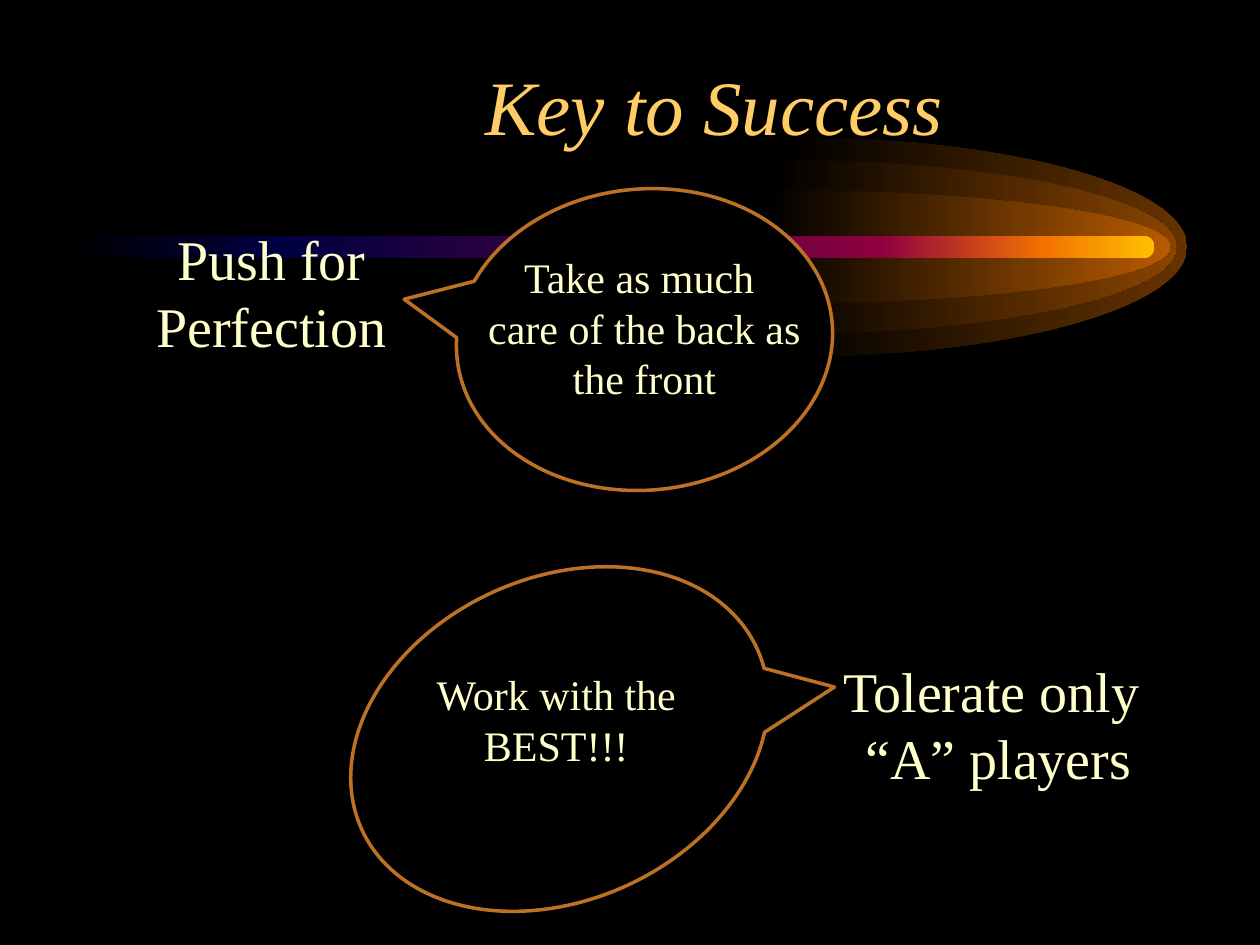
from lxml import etree
from pptx import Presentation
from pptx.dml.color import RGBColor
from pptx.enum import shapes, text
from pptx.oxml.ns import qn
from pptx.util import Inches, Pt

BLACK = RGBColor(0x00, 0x00, 0x00)
GOLD = RGBColor(0xFF, 0xCC, 0x66)
CREAM = RGBColor(0xFF, 0xFF, 0xCC)
COPPER = RGBColor(0xBD, 0x71, 0x26)
GLOWS = [
    (6.29, 0.87, RGBColor(0x66, 0x33, 0x00)),
    (6.21, 0.69, RGBColor(0x89, 0x44, 0x00)),
    (6.16, 0.45, RGBColor(0xB7, 0x5B, 0x00)),
]
COMET = [
    (0, BLACK),
    (20, RGBColor(0x00, 0x00, 0x40)),
    (50, RGBColor(0x40, 0x00, 0x40)),
    (75, RGBColor(0x8F, 0x00, 0x40)),
    (90, RGBColor(0xF2, 0x73, 0x00)),
    (100, RGBColor(0xFF, 0xBF, 0x00)),
]
AXIS_Y = 1.96
ARC = 0.55


def fill_gradient(sp, stops):
    """Give a shape a left-to-right gradient and no outline."""
    sp.shadow.inherit = False
    sp.line.fill.background()
    sp.fill.gradient()
    sp.fill.gradient_angle = 0
    gs_list = sp._element.spPr.find(qn("a:gradFill")).find(qn("a:gsLst"))
    for gs in list(gs_list):
        gs_list.remove(gs)
    for percent, color in stops:
        gs = etree.SubElement(gs_list, qn("a:gs"), pos=str(percent * 1000))
        etree.SubElement(gs, qn("a:srgbClr"), val=str(color))


def curve_segments(sp, curves):
    """Turn the first line segments, three by three, into Bezier curves."""
    outline = next(sp._element.iter(qn("a:path")))
    lines = outline.findall(qn("a:lnTo"))
    for i in range(0, 3 * curves, 3):
        curve = etree.Element(qn("a:cubicBezTo"))
        lines[i].addprevious(curve)
        for line in lines[i:i + 3]:
            curve.append(line[0])
            outline.remove(line)


def add_glow(s, x, radius_y, color, radius_x=3.13):
    """Draw the right half of an ellipse fading in from black."""
    units = [(0, -1), (ARC, -1), (1, -ARC), (1, 0), (1, ARC), (ARC, 1), (0, 1),
             (-0.05 / radius_x, 1), (0, 0)]
    points = [(Inches(x + radius_x * dx), Inches(AXIS_Y + radius_y * dy))
              for dx, dy in units]
    builder = s.shapes.build_freeform(*points[0])
    builder.add_line_segments(points[1:], close=True)
    sp = builder.convert_to_shape()
    curve_segments(sp, 2)
    fill_gradient(sp, [(0, BLACK), (100, color)])


def add_comet(s):
    """Draw the rounded gradient bar along the glow axis."""
    sp = s.shapes.add_shape(
        shapes.MSO_SHAPE.ROUNDED_RECTANGLE,
        Inches(0.5), Inches(AXIS_Y - 0.09), Inches(8.66), Inches(0.18),
    )
    sp.adjustments[0] = 0.5
    fill_gradient(sp, COMET)


def add_callout(s, left, top, width, height, rotation):
    """Draw a rotated, outlined speech bubble."""
    sp = s.shapes.add_shape(
        shapes.MSO_SHAPE.OVAL_CALLOUT,
        Inches(left), Inches(top), Inches(width), Inches(height),
    )
    sp.shadow.inherit = False
    sp.rotation = rotation
    sp.fill.solid()
    sp.fill.fore_color.rgb = BLACK
    sp.line.color.rgb = COPPER
    sp.line.width = Pt(2)


def add_text(s, lines, left, top, width, height, size, color=CREAM, italic=None,
             anchor=text.MSO_ANCHOR.TOP):
    """Add a centred text box with one paragraph per line."""
    sp = s.shapes.add_textbox(Inches(left), Inches(top), Inches(width), Inches(height))
    tf = sp.text_frame
    tf.word_wrap = True
    tf.vertical_anchor = anchor
    for i, line in enumerate(lines):
        p = tf.add_paragraph() if i else tf.paragraphs[0]
        p.alignment = text.PP_ALIGN.CENTER
        r = p.add_run()
        r.text = line
        r.font.name = "Times New Roman"
        r.font.size = Pt(size)
        r.font.italic = italic
        r.font.color.rgb = color


def main():
    """Build the slide and save it."""
    prs = Presentation()
    prs.slide_width, prs.slide_height = Inches(10), Inches(7.5)
    s = prs.slides.add_slide(prs.slide_layouts[6])
    s.background.fill.solid()
    s.background.fill.fore_color.rgb = BLACK

    for x, radius_y, color in GLOWS:
        add_glow(s, x, radius_y, color)
    add_comet(s)

    add_text(s, ["Key to Success"], 1.57, 0, 8.2, 1.25, size=44, color=GOLD,
             italic=True, anchor=text.MSO_ANCHOR.BOTTOM)
    add_text(s, ["Push for Perfection"], 1.02, 1.73, 2.27, 1.18, size=32)
    add_callout(s, 3.92, 1.2, 2.39, 2.99, rotation=84.6)
    add_text(s, ["Take as much ", "care of the back as the front"],
             3.75, 1.95, 2.73, 1.31, size=24)
    add_callout(s, 3.16, 4.14, 2.56, 3.45, rotation=245.4)
    add_text(s, ["Work with the BEST!!!"], 3.05, 5.26, 2.73, 0.91, size=24)
    add_text(s, ["Tolerate only ", "“A” players"], 6.56, 5.16, 2.73, 1.18, size=32)

    prs.save("out.pptx")


if __name__ == "__main__":
    main()
